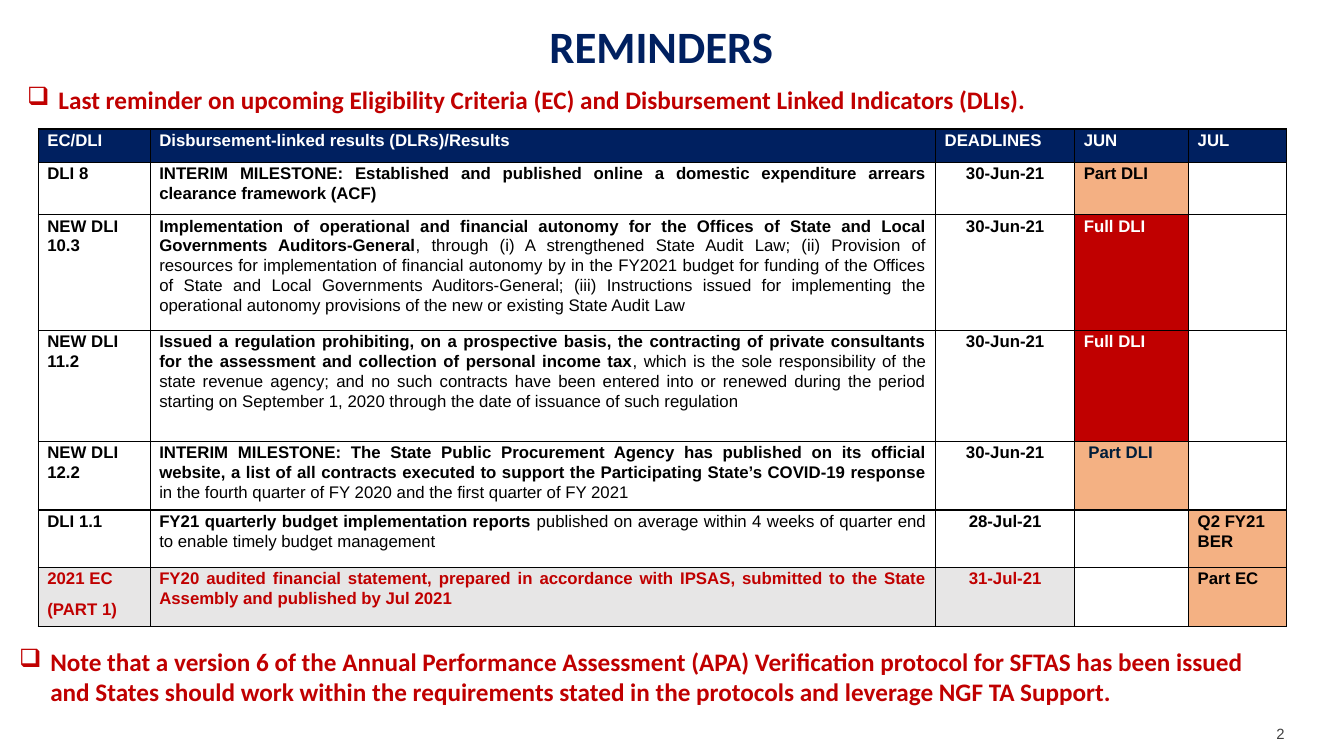
from lxml import etree
from pptx import Presentation
from pptx.dml.color import RGBColor
from pptx.enum.text import MSO_ANCHOR, PP_ALIGN
from pptx.oxml.ns import qn
from pptx.util import Emu, Pt

LEFT, MID, JUST = PP_ALIGN.LEFT, PP_ALIGN.CENTER, PP_ALIGN.JUSTIFY
TOP, CENTER = MSO_ANCHOR.TOP, MSO_ANCHOR.MIDDLE
NAVY, RED, BLACK, WHITE = "002060", "C00000", "000000", "FFFFFF"
GREY, INK, PEACH = "E7E6E6", "001D3A", "F4B183"

HEAD = ["EC/DLI", "Disbursement-linked results (DLRs)/Results", "DEADLINES", "JUN", "JUL"]
COLS = [111, 779, 138, 113, 97]
ROWS = [33, 52, 115, 110, 68, 57, 59]
PART = ("Part DLI", "F4B083", BLACK)
FULL = ("Full DLI", RED, WHITE)
GOALS = [
    ("DLI 8",
     "INTERIM MILESTONE: Established and published online a domestic expenditure arrears clearance framework (ACF)",
     "", "30-Jun-21", PART, None),
    ("NEW DLI 10.3",
     "Implementation of operational and financial autonomy for the Offices of State and Local Governments Auditors-General",
     ", through (i) A strengthened State Audit Law; (ii) Provision of resources for implementation of financial "
     "autonomy by in the FY2021 budget for funding of the Offices of State and Local Governments Auditors-General; "
     "(iii) Instructions issued for implementing the operational autonomy provisions of the new or existing State Audit Law",
     "30-Jun-21", FULL, None),
    ("NEW DLI 11.2",
     "Issued a regulation prohibiting, on a prospective basis, the contracting of private consultants for the "
     "assessment and collection of personal income tax",
     ", which is the sole responsibility of the state revenue agency; and no such contracts have been entered into or "
     "renewed during the period starting on September 1, 2020 through the date of issuance of such regulation",
     "30-Jun-21", FULL, None),
    ("NEW DLI 12.2",
     "INTERIM MILESTONE: The State Public Procurement Agency has published on its official website, a list of all "
     "contracts executed to support the Participating State’s COVID-19 response",
     " in the fourth quarter of FY 2020 and the first quarter of FY 2021",
     "30-Jun-21", (" Part DLI", PEACH, INK), None),
    ("DLI 1.1", "FY21 quarterly budget implementation reports ",
     "published on average within 4 weeks of quarter end to enable timely budget management",
     "28-Jul-21", None, ("Q2 FY21 BER", PEACH, BLACK)),
    ("2021 EC\n(PART 1)",
     "FY20 audited financial statement, prepared in accordance with IPSAS, submitted to the State Assembly and "
     "published by Jul 2021",
     "", "31-Jul-21", None, ("Part EC", PEACH, BLACK)),
]


def px(n):
    return Emu(n * 9144)


def rgb(code):
    return RGBColor.from_string(code)


class Deck:
    def __init__(self, wide, high):
        self.file = Presentation()
        self.file.slide_width, self.file.slide_height = px(wide), px(high)
        self.slide = self.file.slides.add_slide(self.file.slide_layouts[5])

    def font(self, para, size, color, face="Calibri", bold=True):
        font = para.font
        font.name, font.size, font.bold = face, Pt(size), bold
        font.color.rgb = rgb(color)

    def frame(self, shape, box, pad, anchor=TOP):
        shape.left, shape.top, shape.width, shape.height = map(px, box)
        frame = shape.text_frame
        frame.word_wrap = True
        frame.vertical_anchor = anchor
        frame.margin_left, frame.margin_top, frame.margin_right, frame.margin_bottom = map(px, pad)
        return frame.paragraphs[0]

    def title(self, text, box):
        para = self.frame(self.slide.shapes.title, box, (0, 0, 0, 0), CENTER)
        para.text, para.alignment, para.line_spacing = text, MID, 0.9
        self.font(para, 32, NAVY)

    def text(self, text, box, pad):
        para = self.frame(self.slide.shapes.add_textbox(0, 0, 0, 0), box, pad)
        para.text = text
        return para

    def bullet(self, text, box, pad, space):
        para = self.text(text, box, pad)
        para.line_spacing = space
        props = para._p.get_or_add_pPr()
        props.set("marL", str(px(31)))
        props.set("indent", str(-px(31)))
        tint = etree.SubElement(props, qn("a:buClr"))
        etree.SubElement(tint, qn("a:srgbClr"), val=RED)
        etree.SubElement(props, qn("a:buChar"), char="❑")
        self.font(para, 18, RED)

    def border(self, cell):
        props = cell._tc.get_or_add_tcPr()
        for i, side in enumerate("LRTB"):
            line = etree.Element(qn("a:ln" + side), w=str(Pt(1)))
            fill = etree.SubElement(line, qn("a:solidFill"))
            etree.SubElement(fill, qn("a:srgbClr"), val=BLACK)
            props.insert(i, line)

    def cell(self, cell, bold="", plain="", fill=None, color=BLACK, align=LEFT):
        cell.margin_left = cell.margin_right = px(9)
        cell.margin_top, cell.margin_bottom = px(1), 0
        if fill:
            cell.fill.solid()
            cell.fill.fore_color.rgb = rgb(fill)
        else:
            cell.fill.background()
        self.border(cell)
        cell.text = bold
        for para in cell.text_frame.paragraphs:
            para.alignment, para.line_spacing, para.space_after = align, 1.06, Pt(8)
            self.font(para, 12, color, "Arial")
        if plain:
            run = para.add_run()
            run.text, run.font.bold = plain, False

    def table(self, left, top):
        grid = self.slide.shapes.add_table(
            len(ROWS), len(COLS), px(left), px(top), px(sum(COLS)), px(sum(ROWS))).table
        for col, wide in zip(grid.columns, COLS):
            col.width = px(wide)
        for row, high in zip(grid.rows, ROWS):
            row.height = px(high)
        for i, name in enumerate(HEAD):
            self.cell(grid.cell(0, i), name, fill=NAVY, color=WHITE)
        for r, (label, bold, plain, date, *marks) in enumerate(GOALS, 1):
            last = r == len(GOALS)
            look = {"fill": GREY, "color": RED} if last else {}
            self.cell(grid.cell(r, 0), label, **look)
            self.cell(grid.cell(r, 1), bold, plain, align=JUST, **look)
            self.cell(grid.cell(r, 2), date, align=MID, **look)
            for c, mark in enumerate(marks, 3):
                word, fill, color = mark or ("", None, BLACK)
                self.cell(grid.cell(r, c), word, fill=fill, color=color)


def main():
    deck = Deck(1333, 750)
    deck.title("REMINDERS", (27, 25, 1258, 48))
    page = deck.text("2", (1266, 716, 28, 21), (0, 3, 0, 0))
    deck.font(page, 10.6, "404040", "Arial", False)
    deck.table(38, 128)
    deck.bullet("Last reminder on upcoming Eligibility Criteria (EC) and Disbursement Linked Indicators (DLIs).",
                (27, 87, 1258, 27), (0, 0, 0, 0), 0.9)
    deck.bullet("Note that a version 6 of the Annual Performance Assessment (APA) Verification protocol for SFTAS has "
                "been issued and States should work within the requirements stated in the protocols and leverage "
                "NGF TA Support.", (9, 636, 1248, 71), (10, 5, 10, 5), 1.0)
    deck.file.save("out.pptx")


if __name__ == "__main__":
    main()
